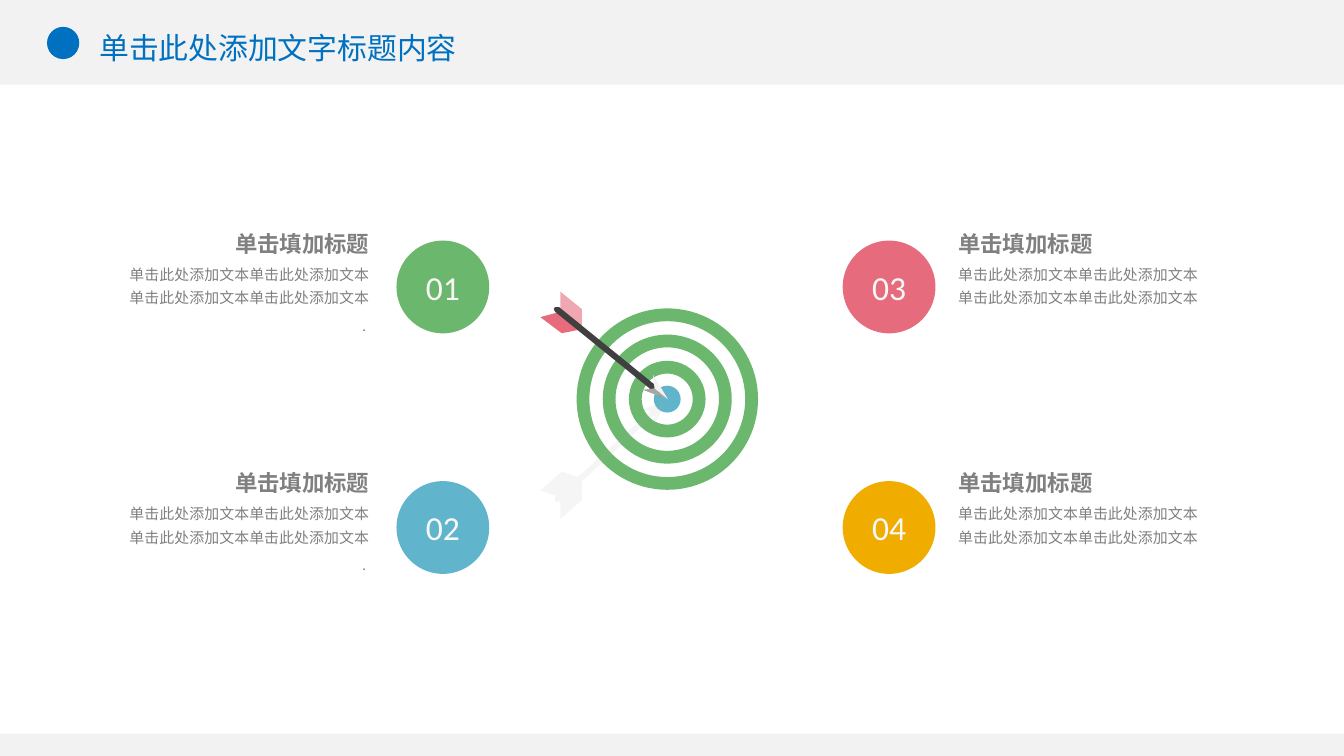
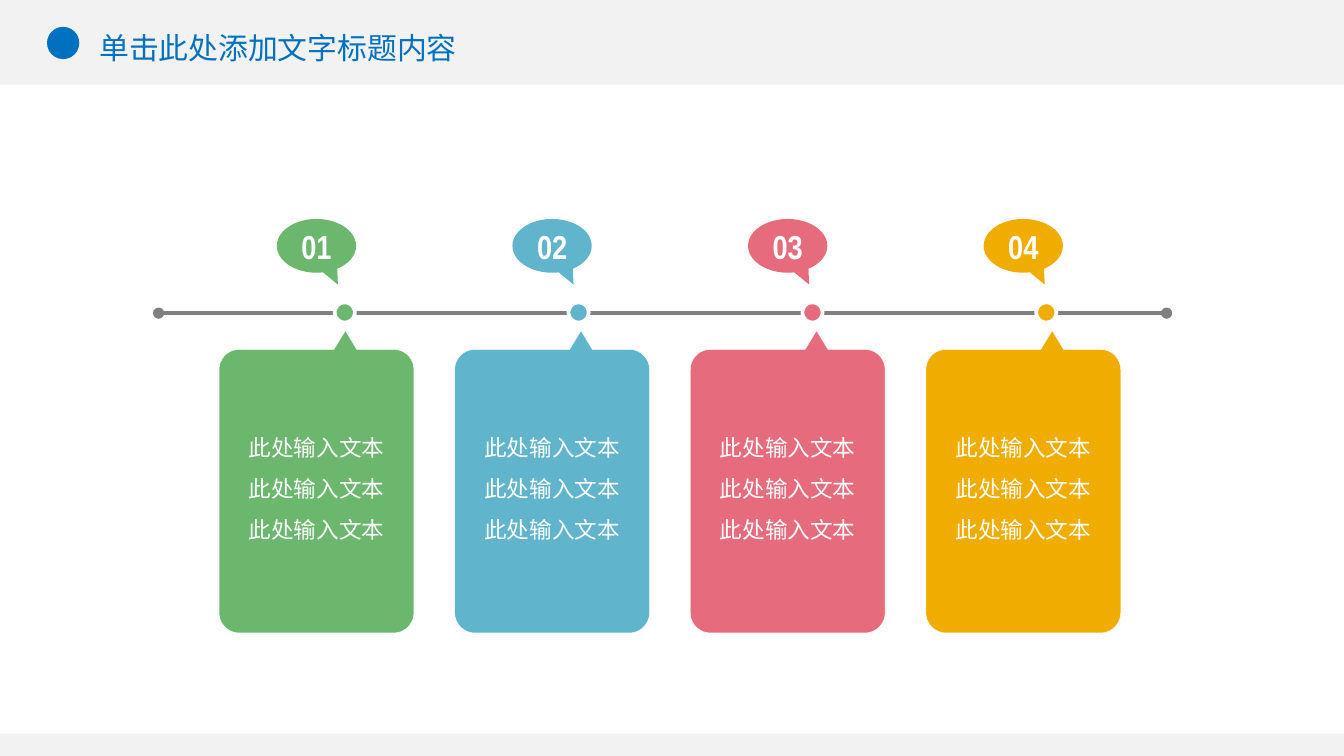
"""Builds two slides: a target with four notes and a four-step timeline."""
import dataclasses
import math

import lxml.etree
import pptx
import pptx.dml.color
import pptx.enum.shapes
import pptx.enum.text
import pptx.oxml.ns
import pptx.util

SHAPE = pptx.enum.shapes.MSO_SHAPE
ALIGN = pptx.enum.text.PP_ALIGN
ANCHOR = pptx.enum.text.MSO_ANCHOR
qn = pptx.oxml.ns.qn


@dataclasses.dataclass(frozen=True)
class Theme:
    band: str = "F2F2F2"
    paper: str = "FFFFFF"
    title: str = "0070C0"
    grey: str = "808080"
    full_stop: str = "7C7C7C"
    badge_text: str = "F8F8F8"
    green: str = "6BB76D"
    blue: str = "60B5CC"
    pink: str = "E66C7D"
    amber: str = "F0AD00"
    pale_pink: str = "F0A7B1"
    shaft: str = "404040"
    steel: str = "A6A6A6"
    cjk_font: str = "Noto Sans CJK SC"
    number_font: str = "Calibri"
    callout_font: str = "Arial Narrow"
    title_size: float = 16
    heading_size: float = 12
    body_size: float = 8
    badge_size: float = 18
    callout_size: float = 17.8
    card_size: float = 12.1

    @property
    def steps(self):
        return self.green, self.blue, self.pink, self.amber


def rgb(color):
    return pptx.dml.color.RGBColor.from_string(color)


def write(frame, text, *, size, color, font, bold=False, align=ALIGN.LEFT, spacing=1.0, before=0):
    first = frame.paragraphs[0]
    paragraph = frame.add_paragraph() if first.runs else first
    paragraph.alignment = align
    paragraph.line_spacing = spacing
    paragraph.space_before = pptx.util.Pt(before if paragraph is not first else 0)
    run = paragraph.add_run()
    run.text = text
    run.font.size = pptx.util.Pt(size)
    run.font.bold = bold
    run.font.color.rgb = rgb(color)
    run.font.name = font
    east_asian = lxml.etree.SubElement(run.font._element, qn("a:ea"))
    east_asian.set("typeface", font)


class Deck:
    columns = 100
    rows = 56.25

    def __init__(self, theme):
        self.theme = theme
        self.show = pptx.Presentation()
        self.show.slide_width = pptx.util.Inches(10)
        self.show.slide_height = pptx.util.Inches(5.625)
        backdrop = self.show.slide_master.background.fill
        backdrop.solid()
        backdrop.fore_color.rgb = rgb(theme.band)
        self.slide = None

    def x(self, column):
        return round(self.show.slide_width * column / self.columns)

    def y(self, row):
        return round(self.show.slide_height * row / self.rows)

    def box(self, left, top, width, height):
        return self.x(left), self.y(top), self.x(width), self.y(height)

    def new_slide(self, title):
        theme = self.theme
        self.slide = self.show.slides.add_slide(self.show.slide_layouts[5])
        heading = self.slide.shapes.title
        heading.left, heading.top, heading.width, heading.height = self.box(6.7, 1.8, 29.5, 3.4)
        frame = self.frame(heading, ANCHOR.TOP, 0.7, 0.4)
        write(frame, title, size=theme.title_size, color=theme.title, font=theme.cjk_font)
        self.shape(SHAPE.RECTANGLE, 0, 6.3, self.columns, 48.3, theme.paper)
        self.shape(SHAPE.OVAL, 3.5, 2, 2.4, 2.4, theme.title)

    def frame(self, holder, anchor, side=0, edge=0):
        frame = holder.text_frame
        frame.auto_size = pptx.enum.text.MSO_AUTO_SIZE.NONE
        frame.word_wrap = True
        frame.vertical_anchor = anchor
        frame.margin_left = frame.margin_right = self.x(side)
        frame.margin_top = frame.margin_bottom = self.y(edge)
        return frame

    def text(self, left, top, width, height):
        return self.frame(self.slide.shapes.add_textbox(*self.box(left, top, width, height)), ANCHOR.TOP)

    def paint(self, shape, fill, line=None, weight=0.25):
        shape.shadow.inherit = False
        shape.fill.solid()
        shape.fill.fore_color.rgb = rgb(fill)
        if line:
            shape.line.color.rgb = rgb(line)
            shape.line.width = pptx.util.Pt(weight)
        else:
            shape.line.fill.background()
        return shape

    def shape(self, kind, left, top, width, height, fill, line=None, weight=0.25, adjust=()):
        shape = self.slide.shapes.add_shape(kind, *self.box(left, top, width, height))
        for index, value in enumerate(adjust):
            shape.adjustments[index] = value
        return self.paint(shape, fill, line, weight)

    def centred(self, kind, middle, size, fill, **style):
        column, row = middle
        return self.shape(kind, column - size / 2, row - size / 2, size, size, fill, **style)

    def outline(self, points, fill, line=None, opacity=100):
        places = [(self.x(column), self.y(row)) for column, row in points]
        builder = self.slide.shapes.build_freeform(*places[0])
        builder.add_line_segments(places[1:], close=True)
        shape = self.paint(builder.convert_to_shape(), fill, line)
        if opacity < 100:
            color = shape._element.spPr.find(qn("a:solidFill")).find(qn("a:srgbClr"))
            lxml.etree.SubElement(color, qn("a:alpha")).set("val", str(opacity * 1000))
        return shape

    def dotted_end_line(self, start, end, row, color, weight):
        line = self.slide.shapes.add_connector(
            pptx.enum.shapes.MSO_CONNECTOR.STRAIGHT, self.x(start), self.y(row), self.x(end), self.y(row))
        line.line.color.rgb = rgb(color)
        line.line.width = pptx.util.Pt(weight)
        properties = line._element.spPr
        for end_tag in ("a:headEnd", "a:tailEnd"):
            lxml.etree.SubElement(properties.find(qn("a:ln")), qn(end_tag)).set("type", "oval")
        lxml.etree.SubElement(properties, qn("a:effectLst"))


def card_points(left, top, width, height, tip, radius=1.5, peak=1.4):
    shoulder, right, bottom = top + peak, left + width, top + height
    corners = [(right - radius, shoulder + radius, -90), (right - radius, bottom - radius, 0),
               (left + radius, bottom - radius, 90), (left + radius, shoulder + radius, 180)]
    points = [(left + tip, top), (left + tip + 0.85, shoulder)]
    for column, row, start in corners:
        for degrees in range(start, start + 91, 10):
            turn = math.radians(degrees)
            points.append((column + radius * math.cos(turn), row + radius * math.sin(turn)))
    return points + [(left + tip - 0.85, shoulder)]


def draw_target(deck):
    theme, centre = deck.theme, (49.65, 29.7)
    deck.centred(SHAPE.OVAL, centre, 13.4, theme.paper)
    deck.centred(SHAPE.OVAL, centre, 2, theme.blue)
    for size in (13.5, 9.6, 5.7):
        deck.centred(SHAPE.DONUT, centre, size, theme.green, adjust=(0.95 / size,))
    arrow = [
        (theme.pink, [(43.3, 24.5), (41.8, 24.8), (40.2, 23.6), (41.7, 23.2)]),
        (theme.pale_pink, [(43.3, 24.5), (43.3, 23), (41.7, 21.7), (41.7, 23.2)]),
        (theme.shaft, [(49.1, 29.5), (48.95, 29.4), (41.3, 23.2), (41.2, 23), (41.3, 22.85),
                       (41.6, 22.85), (49.3, 29.1), (49.4, 29.25), (49.3, 29.4)]),
        (theme.steel, [(47.8, 29), (49.7, 29.7), (48.7, 28.9)]),
        (theme.band, [(48.7, 28.9), (49.7, 29.7), (48.6, 27.9)]),
    ]
    for color, points in arrow:
        deck.outline(points, color)
    cast_shadow = [(49.7, 29.7), (48.6, 31.7), (48.7, 30.9), (46.8, 32.6), (43.3, 35.8), (43.3, 37.2),
                   (41.7, 38.6), (41.7, 37.3), (41.3, 37.3), (41.3, 37), (41.4, 36.9), (40.2, 36.5),
                   (41.8, 35.1), (43, 35.5), (45.4, 33.3), (48.4, 30.6), (47.8, 30.5)]
    deck.outline(cast_shadow, theme.steel, opacity=10)


def draw_notes(deck):
    theme = deck.theme
    sentence = "单击此处添加文本单击此处添加文本"
    for index, color in enumerate(theme.steps):
        side, level = divmod(index, 2)
        style = {"font": theme.cjk_font, "color": theme.grey, "align": ALIGN.LEFT if side else ALIGN.RIGHT}
        note = deck.text((5.5, 71.3)[side], 16.7 + 17.8 * level, 22, (8.2, 6.2)[side])
        write(note, "单击填加标题", size=theme.heading_size, bold=True, spacing=1.2, **style)
        write(note, sentence, size=theme.body_size, spacing=1.2, before=3, **style)
        write(note, sentence, size=theme.body_size, spacing=1.3, **style)
        if not side:
            write(note, ". ", size=theme.body_size, spacing=1.2, before=3,
                  font=theme.number_font, color=theme.full_stop, align=ALIGN.RIGHT)
        badge = deck.shape(SHAPE.OVAL, (29.5, 62.7)[side], 17.9 + 17.9 * level, 6.9, 6.9, color)
        write(deck.frame(badge, ANCHOR.MIDDLE), f"{index + 1:02}", size=theme.badge_size,
              color=theme.badge_text, font=theme.number_font, align=ALIGN.CENTER)


def draw_timeline(deck):
    theme = deck.theme
    deck.dotted_end_line(11.8, 86.8, 23.3, theme.grey, 2)
    for index, color in enumerate(theme.steps):
        left = 16.3 + 17.53 * index
        deck.shape(SHAPE.OVAL, 24.9 + 17.4 * index, 22.5, 1.5, 1.5, color, line=theme.paper, weight=2)
        callout = deck.shape(SHAPE.OVAL_CALLOUT, left + 4.3, 16.3, 5.9, 4, color, adjust=(0.27, 0.72))
        write(deck.frame(callout, ANCHOR.MIDDLE), f"{index + 1:02}", size=theme.callout_size, bold=True,
              color=theme.paper, font=theme.callout_font, align=ALIGN.CENTER)
        card = deck.outline(card_points(left, 24.6, 14.5, 22.5, tip=9.4), color, line=theme.paper)
        body = deck.frame(card, ANCHOR.MIDDLE, 1, 0.5)
        for _ in range(3):
            write(body, "此处输入文本", size=theme.card_size, color=theme.paper,
                  font=theme.cjk_font, align=ALIGN.CENTER, spacing=1.5)


def main():
    deck = Deck(Theme())
    title = "单击此处添加文字标题内容"
    deck.new_slide(title)
    draw_notes(deck)
    draw_target(deck)
    deck.new_slide(title)
    draw_timeline(deck)
    deck.show.save("out.pptx")


if __name__ == "__main__":
    main()
